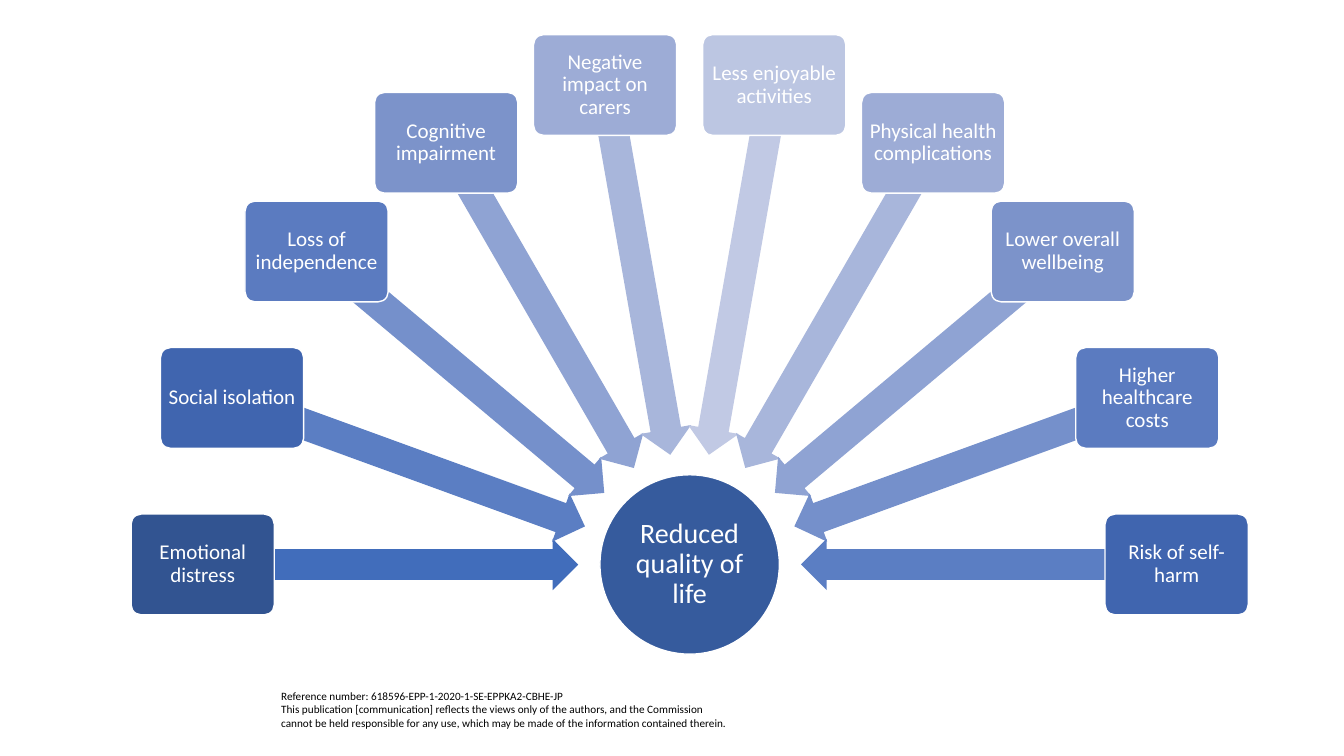
"""Build a slide with ten burdens pointing at a reduced quality of life."""
from copy import deepcopy
from dataclasses import dataclass
from math import cos, radians, sin

from pptx import Presentation
from pptx.dml.color import RGBColor
from pptx.enum.shapes import MSO_SHAPE
from pptx.enum.text import MSO_ANCHOR, PP_ALIGN
from pptx.oxml.ns import qn
from pptx.util import Inches, Pt

HUB = "Reduced quality of life"
BURDENS = [
    "Emotional distress",
    "Social isolation",
    "Loss of independence",
    "Cognitive impairment",
    "Negative impact on carers",
    "Less enjoyable activities",
    "Physical health complications",
    "Lower overall wellbeing",
    "Higher healthcare costs",
    "Risk of self-harm",
]
REFERENCE = (
    "Reference number: 618596-EPP-1-2020-1-SE-EPPKA2-CBHE-JP\n"
    "This publication [communication] reflects the views only of the authors, "
    "and the Commission cannot be held responsible for any use, "
    "which may be made of the information contained therein."
)


@dataclass(frozen=True)
class Theme:
    font: str = "Calibri"
    white: str = "FFFFFF"
    black: str = "000000"
    hub: str = "365B9D"
    boxes: tuple = ("325491", "4065AF", "5B7BC0", "7C93CA", "9DACD6", "BCC6E2")
    arrows: tuple = ("416DBB", "5B7EC3", "7590CB", "8FA3D3", "A8B6DB", "C1C9E4")
    hub_size: int = 20
    box_size: int = 15
    note_size: int = 8


THEME = Theme()
SLIDE_W, SLIDE_H = 13.33, 7.5
HUB_X, HUB_Y, HUB_D = 6.84, 5.6, 1.78
BOX_W, BOX_H, BOX_RADIUS = 1.42, 1, 4.83
ARROW_W, ARROW_H, ARROW_RADIUS = 3.73, 0.51, 2.97


def write(sp, text, *, size, color, align=PP_ALIGN.LEFT, anchor=MSO_ANCHOR.TOP,
          margin=None, spacing=None):
    tf = sp.text_frame
    tf.word_wrap = True
    tf.vertical_anchor = anchor
    if margin is not None:
        tf.margin_left = tf.margin_right = Inches(margin)
        tf.margin_top = tf.margin_bottom = Inches(margin)
    p = tf.paragraphs[0]
    p.text = text
    p.alignment = align
    p.line_spacing = spacing
    for r in p.runs:
        r.font.name = THEME.font
        r.font.size = Pt(size)
        r.font.color.rgb = RGBColor.from_string(color)
    for br in p._p.findall(qn("a:br")):
        br.append(deepcopy(p.runs[0].font._element))


def add_centred(s, kind, x, y, w, h, fill, line=None):
    sp = s.shapes.add_shape(
        kind, Inches(x - w / 2), Inches(y - h / 2), Inches(w), Inches(h))
    sp.shadow.inherit = False
    sp.fill.solid()
    sp.fill.fore_color.rgb = RGBColor.from_string(fill)
    if line:
        sp.line.color.rgb = RGBColor.from_string(line)
        sp.line.width = Pt(1)
    else:
        sp.line.fill.background()
    return sp


def on_ray(angle, radius):
    return (HUB_X + radius * cos(radians(angle)),
            HUB_Y + radius * sin(radians(angle)))


def main():
    prs = Presentation()
    prs.slide_width, prs.slide_height = Inches(SLIDE_W), Inches(SLIDE_H)
    s = prs.slides.add_slide(prs.slide_layouts[6])
    centred = dict(color=THEME.white, align=PP_ALIGN.CENTER,
                   anchor=MSO_ANCHOR.MIDDLE, spacing=0.9)

    note = s.shapes.add_textbox(
        Inches(2.69), Inches(6.79), Inches(4.64), Inches(0.5))
    write(note, REFERENCE, size=THEME.note_size, color=THEME.black)

    hub = add_centred(s, MSO_SHAPE.OVAL, HUB_X, HUB_Y, HUB_D, HUB_D,
                      THEME.hub, THEME.white)
    write(hub, HUB, size=THEME.hub_size, margin=0.01, **centred)

    count = len(BURDENS)
    for i, burden in enumerate(BURDENS):
        angle = 180 + 180 * i / (count - 1)
        shade = min(i, count - i)
        arrow = add_centred(s, MSO_SHAPE.LEFT_ARROW, *on_ray(angle, ARROW_RADIUS),
                            ARROW_W, ARROW_H, THEME.arrows[shade])
        arrow.adjustments[0], arrow.adjustments[1] = 0.6, 0.5
        arrow.rotation = angle % 360
        box = add_centred(s, MSO_SHAPE.ROUNDED_RECTANGLE, *on_ray(angle, BOX_RADIUS),
                          BOX_W, BOX_H, THEME.boxes[shade], THEME.white)
        box.adjustments[0] = 0.1
        write(box, burden, size=THEME.box_size, margin=0.03, **centred)

    prs.save("out.pptx")


if __name__ == "__main__":
    main()
